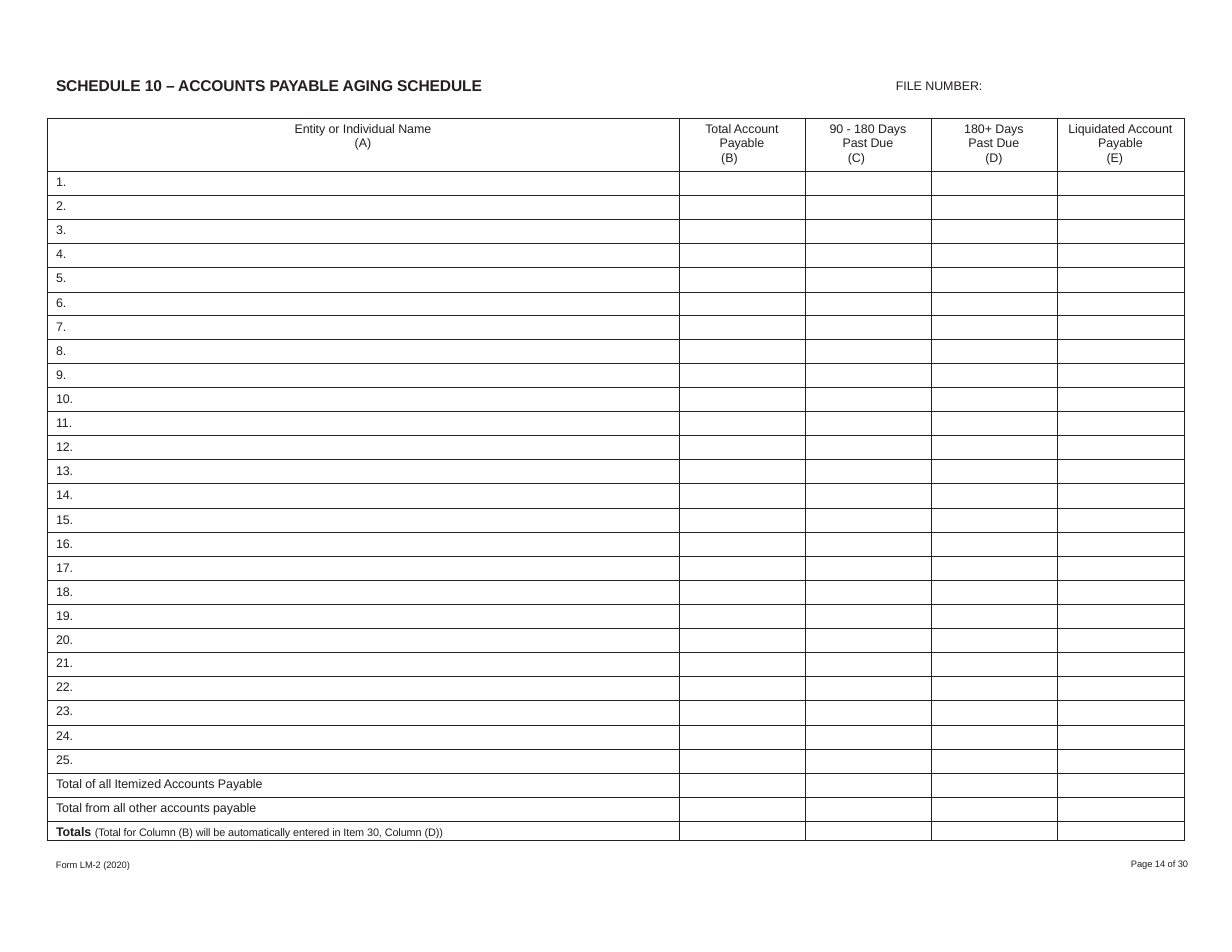
from lxml.etree import SubElement
from pptx import Presentation
from pptx.dml.color import RGBColor
from pptx.enum.text import MSO_ANCHOR, MSO_AUTO_SIZE, PP_ALIGN
from pptx.oxml.ns import qn
from pptx.util import Emu, Pt

INK = "231F20"
ITEM_COUNT = 25
COLUMN_WIDTHS = [632, 126, 126, 126, 127]
HEADER_HEIGHT, BODY_HEIGHT, TOTALS_HEIGHT = 53, 651, 19
HEADINGS = [
    (["Entity or Individual Name", "(A)"], 0),
    (["Total Account", "Payable", "(B)"], 25),
    (["90 - 180 Days", "Past Due", "(C)"], 23),
    (["180+ Days", "Past Due", "(D)"], 0),
    (["Liquidated Account", "Payable", "(E)"], 11),
]
TOTAL_LABELS = ["Total of all Itemized Accounts Payable",
                "Total from all other accounts payable"]
TOTALS_NOTE = "(Total for Column (B) will be automatically entered in Item 30, Column (D))"


def px(length):
    """Turn pixels into EMU."""
    return Emu(round(length * 914400 / 112))


def colour(hex_code):
    """Turn a hex string into a colour."""
    return RGBColor.from_string(hex_code)


def apply(target, **values):
    """Set each given attribute on the target."""
    for name, value in values.items():
        setattr(target, name, value)


def write(paragraph, words, size, bold=False):
    """Add a run of form text to a paragraph."""
    run = paragraph.add_run()
    run.text = words
    apply(run.font, name="Arial", size=Pt(size), bold=bold)
    run.font.color.rgb = colour(INK)
    run.font._element.set("spc", "-5")


def indent(paragraph, left=0, right=0):
    """Set the side indents of a paragraph."""
    properties = paragraph._p.get_or_add_pPr()
    for name, length in {"marL": left, "marR": right, "indent": 0}.items():
        properties.set(name, str(px(length)))


def fill_label(label, box, words, size, before, bold=False, top=1):
    """Place and format a one-line label."""
    apply(label, **dict(zip(("left", "top", "width", "height"), map(px, box))))
    frame = label.text_frame
    apply(frame, word_wrap=True, auto_size=MSO_AUTO_SIZE.NONE,
          vertical_anchor=MSO_ANCHOR.TOP, margin_left=0, margin_right=0,
          margin_top=px(top), margin_bottom=0)
    paragraph = frame.paragraphs[0]
    apply(paragraph, alignment=PP_ALIGN.LEFT, space_before=Pt(before), line_spacing=1.0)
    indent(paragraph, left=1)
    write(paragraph, words, size, bold)


def add_label(slide, box, words, size, before, top=1):
    """Add a text box holding a one-line label."""
    label = slide.shapes.add_textbox(*map(px, box))
    fill_label(label, box, words, size, before, top=top)


def format_cell(cell):
    """Give a cell thin borders, no fill, tight margins and small text."""
    apply(cell, margin_left=0, margin_right=0, margin_top=px(4), margin_bottom=0)
    properties = cell._tc.get_or_add_tcPr()
    for side in ("lnL", "lnR", "lnT", "lnB"):
        border = SubElement(properties, qn(f"a:{side}"), w=str(Pt(0.5)))
        SubElement(SubElement(border, qn("a:solidFill")), qn("a:srgbClr"), val=INK)
    cell.fill.background()
    if not cell.text_frame.text:
        SubElement(cell.text_frame.paragraphs[0]._p, qn("a:endParaRPr"), sz="800")


def write_heading(cell, lines, letter_indent):
    """Write a column heading, one centred line per paragraph."""
    frame = cell.text_frame
    for number, line in enumerate(lines):
        paragraph = frame.add_paragraph() if number else frame.paragraphs[0]
        apply(paragraph, alignment=PP_ALIGN.CENTER, line_spacing=Pt(9.2),
              space_before=Pt(0 if number else 3))
        indent(paragraph, right=letter_indent if line == lines[-1] else 0)
        write(paragraph, line, 8)


def write_row_label(cell, words, note="", bold=False):
    """Write the first cell of a row, with an optional smaller note."""
    paragraph = cell.text_frame.paragraphs[0]
    paragraph.space_before = Pt(2.4)
    indent(paragraph, left=9)
    write(paragraph, words, 8, bold)
    if note:
        write(paragraph, note, 7)


def row_heights():
    """Share the body height among the rows between header and totals."""
    count = ITEM_COUNT + len(TOTAL_LABELS)
    edges = [round(BODY_HEIGHT * i / count) for i in range(count + 1)]
    body = [low - high for high, low in zip(edges, edges[1:])]
    return [HEADER_HEIGHT, *body, TOTALS_HEIGHT]


def add_schedule(slide):
    """Add the accounts payable table."""
    heights = row_heights()
    frame = slide.shapes.add_table(len(heights), len(COLUMN_WIDTHS), px(47), px(118),
                                   px(sum(COLUMN_WIDTHS)), px(sum(heights)))
    schedule = frame.table
    apply(schedule, first_row=False, horz_banding=False)
    for column, width in zip(schedule.columns, COLUMN_WIDTHS):
        column.width = px(width)
    for row, height in zip(schedule.rows, heights):
        row.height = px(height)
    for column, (lines, letter_indent) in enumerate(HEADINGS):
        write_heading(schedule.cell(0, column), lines, letter_indent)
    labels = [f"{number}." for number in range(1, ITEM_COUNT + 1)] + TOTAL_LABELS
    for row, words in enumerate(labels, start=1):
        write_row_label(schedule.cell(row, 0), words)
    write_row_label(schedule.cell(len(heights) - 1, 0), "Totals ", TOTALS_NOTE, bold=True)
    for cell in schedule.iter_cells():
        format_cell(cell)


def main():
    """Build the schedule page."""
    deck = Presentation()
    apply(deck, slide_width=px(1232), slide_height=px(952))
    slide = deck.slides.add_slide(deck.slide_layouts[5])
    fill_label(slide.shapes.title, (55, 75, 468, 20),
               "SCHEDULE 10 – ACCOUNTS PAYABLE AGING SCHEDULE", 10, 0.9, bold=True)
    add_label(slide, (895, 77, 91, 18), "FILE NUMBER:", 8, 1)
    add_schedule(slide)
    add_label(slide, (55, 858, 203, 12), "Form LM-2 (2020)", 6, 0.4)
    add_label(slide, (1130, 847, 62, 24), "Page 14 of 30", 6, 0.7, top=11)
    deck.save("out.pptx")


if __name__ == "__main__":
    main()
